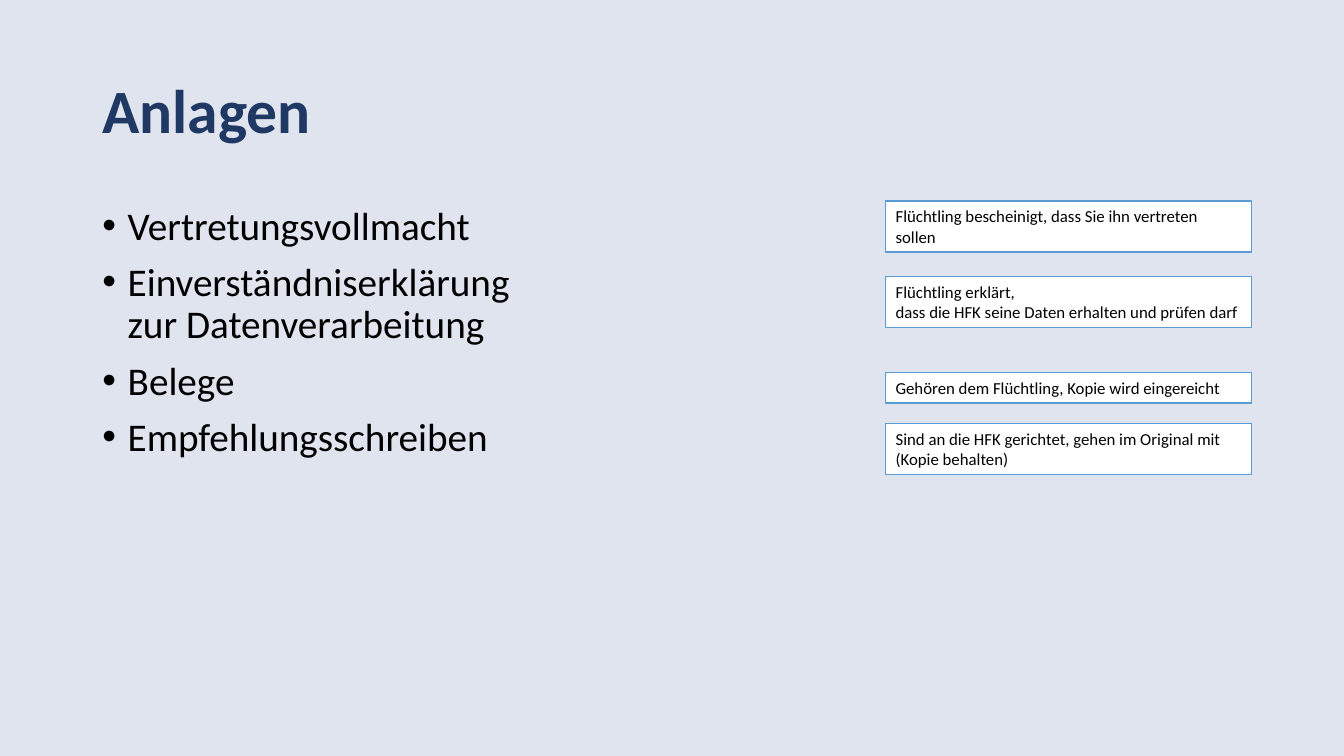
from lxml import etree
from pptx import Presentation
from pptx.dml.color import RGBColor
from pptx.enum.shapes import MSO_SHAPE
from pptx.enum.text import MSO_ANCHOR, PP_ALIGN
from pptx.oxml.ns import qn
from pptx.util import Cm, Pt

RECT = MSO_SHAPE.RECTANGLE
TOP, MIDDLE = MSO_ANCHOR.TOP, MSO_ANCHOR.MIDDLE
LEFT = PP_ALIGN.LEFT
FONT = "Calibri"
COLORS = {"back": "E0E4EE", "title": "203864", "text": "000000",
          "note": "FFFFFF", "edge": "5B9BD5"}

ITEMS = ["Vertretungsvollmacht",
         "Einverständniserklärung \nzur Datenverarbeitung",
         "Belege",
         "Empfehlungsschreiben"]
# Offset from the top of the column, height, paragraphs
NOTES = [
    (0, 1.28, ["Flüchtling bescheinigt, dass Sie ihn vertreten sollen"]),
    (1.9, 1.28, ["Flüchtling erklärt,",
                 "dass die HFK seine Daten erhalten und prüfen darf"]),
    (4.32, 0.77, ["Gehören dem Flüchtling, Kopie wird eingereicht"]),
    (5.61, 1.28, ["Sind an die HFK gerichtet, gehen im Original mit (Kopie behalten)"]),
]


def color(name):
    return RGBColor.from_string(COLORS[name])


def write(frame, texts, size, tint="text", bold=False, anchor=TOP):
    """Fill a text frame with one paragraph per text and return them."""
    frame.word_wrap = True
    frame.vertical_anchor = anchor
    paras = []
    for i, text in enumerate(texts):
        para = frame.add_paragraph() if i else frame.paragraphs[0]
        para.text = text
        para.alignment = LEFT
        font = para.font
        font.name, font.size, font.bold = FONT, Pt(size), bold
        font.color.rgb = color(tint)
        paras.append(para)
    return paras


def space(para):
    para.line_spacing = 0.9
    para.space_before = Pt(10)


def add_bullet(para, indent):
    props = para._p.get_or_add_pPr()
    props.set("marL", str(indent))
    props.set("indent", str(-indent))
    mark = etree.Element(qn("a:buFont"), typeface="Arial")
    char = etree.Element(qn("a:buChar"), char="•")
    fonts = props.find(qn("a:defRPr"))
    fonts.addprevious(mark)
    fonts.addprevious(char)


def add_title(slide, x, y, w, h):
    box = slide.shapes.add_textbox(Cm(x), Cm(y), Cm(w), Cm(h))
    space(write(box.text_frame, ["Anlagen"], 44, "title", True, MIDDLE)[0])


def add_list(slide, x, y, w, h):
    box = slide.shapes.add_textbox(Cm(x), Cm(y), Cm(w), Cm(h))
    for para in write(box.text_frame, ITEMS, 28):
        space(para)
        add_bullet(para, Cm(0.64))


def add_notes(slide, x, y, w):
    for down, h, texts in NOTES:
        note = slide.shapes.add_shape(RECT, Cm(x), Cm(y + down), Cm(w), Cm(h))
        note.shadow.inherit = False
        note.fill.solid()
        note.fill.fore_color.rgb = color("note")
        note.line.color.rgb = color("edge")
        note.line.width = Pt(1)
        write(note.text_frame, texts, 12)


def main():
    deck = Presentation()
    deck.slide_width, deck.slide_height = Cm(33.87), Cm(19.05)
    slide = deck.slides.add_slide(deck.slide_layouts[6])
    slide.background.fill.solid()
    slide.background.fill.fore_color.rgb = color("back")
    x, y, w = 2.33, 5.07, 29.21
    side = 9.22
    add_title(slide, x, 1.01, w, 3.68)
    add_list(slide, x, y, w, 12.09)
    add_notes(slide, x + w - side, y, side)
    deck.save("out.pptx")


if __name__ == "__main__":
    main()
